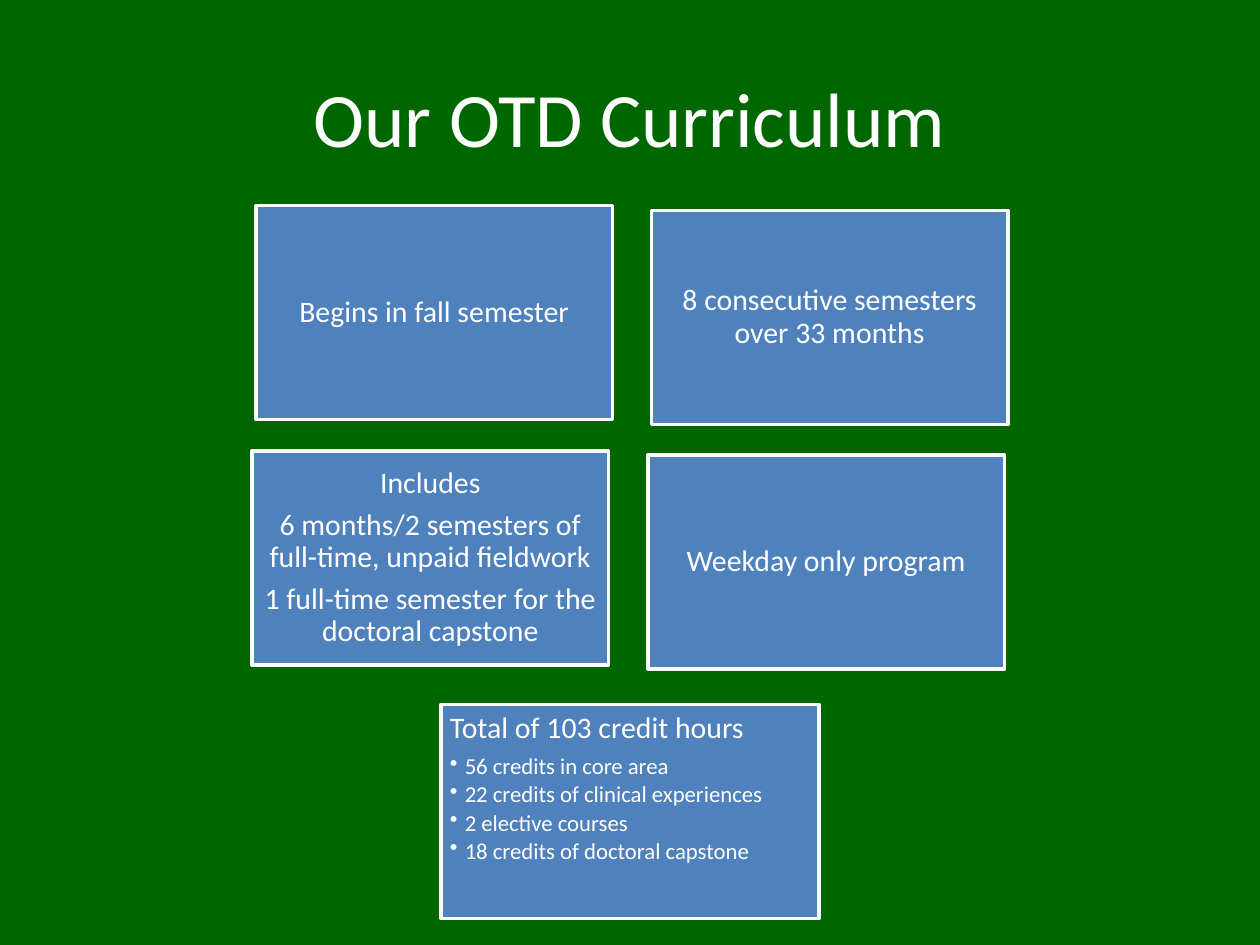
import pptx
import pptx.dml.color
import pptx.enum.shapes
import pptx.enum.text
import pptx.oxml.ns
import pptx.util
from lxml import etree
from pptx.util import Cm, Pt

GREEN = pptx.dml.color.RGBColor(0x00, 0x66, 0x00)
BLUE = pptx.dml.color.RGBColor(0x4F, 0x81, 0xBD)
WHITE = pptx.dml.color.RGBColor(0xFF, 0xFF, 0xFF)

CENTER = pptx.enum.text.PP_ALIGN.CENTER
LEFT = pptx.enum.text.PP_ALIGN.LEFT
MIDDLE = pptx.enum.text.MSO_ANCHOR.MIDDLE
TOP = pptx.enum.text.MSO_ANCHOR.TOP

BOX_WIDTH = 7.19
BOX_HEIGHT = 4.32
BOX_INSET = Cm(0.18)
BULLET_INDENT = Cm(0.3)

MAIN_FORMAT = {"line_spacing": 0.9, "space_after": Pt(5.5)}
DETAIL_FORMAT = {"line_spacing": 0.9, "space_after": Pt(2)}

# Left and top in centimetres, then the paragraphs
FACT_BOXES = [
    (5.16, 4.14, ["Begins in fall semester"]),
    (5.08, 9.09, [
        "Includes",
        "6 months/2 semesters of full-time, unpaid fieldwork",
        "1 full-time semester for the doctoral capstone",
    ]),
    (13.13, 4.24, ["8 consecutive semesters over 33 months"]),
    (13.06, 9.17, ["Weekday only program"]),
]
CREDIT_DETAILS = [
    "56 credits in core area",
    "22 credits of clinical experiences",
    "2 elective courses",
    "18 credits of doctoral capstone",
]


def set_attributes(target, values):
    for name, value in values.items():
        setattr(target, name, value)


def format_font(font, size):
    set_attributes(font, {"name": "Calibri", "size": Pt(size)})
    font.color.rgb = WHITE


def add_title(slide, text):
    title = slide.shapes.title
    set_attributes(title, {
        "left": Cm(1.27), "top": Cm(0.76), "width": Cm(22.86), "height": Cm(3.18),
    })
    title.text_frame.text = text
    title.text_frame.vertical_anchor = MIDDLE
    paragraph = title.text_frame.paragraphs[0]
    paragraph.alignment = CENTER
    format_font(paragraph.runs[0].font, 44)


def add_box(slide, left, top, width, anchor):
    box = slide.shapes.add_shape(
        pptx.enum.shapes.MSO_SHAPE.RECTANGLE,
        Cm(left), Cm(top), Cm(width), Cm(BOX_HEIGHT))
    box.shadow.inherit = False
    box.fill.solid()
    box.fill.fore_color.rgb = BLUE
    box.line.color.rgb = WHITE
    box.line.width = Pt(2)
    set_attributes(box.text_frame, {
        "word_wrap": True, "vertical_anchor": anchor,
        "margin_left": BOX_INSET, "margin_right": BOX_INSET,
        "margin_top": BOX_INSET, "margin_bottom": BOX_INSET,
    })
    return box


def add_bullet(paragraph):
    properties = paragraph._p.get_or_add_pPr()
    properties.set("marL", str(BULLET_INDENT))
    properties.set("indent", str(-BULLET_INDENT))
    bullet = etree.SubElement(properties, pptx.oxml.ns.qn("a:buChar"))
    bullet.set("char", "•")


def write_paragraphs(text_frame, texts, size, alignment, values):
    """Write the texts after any that the frame holds, and return the paragraphs."""
    paragraphs = []
    for text in texts:
        paragraph = text_frame.paragraphs[0]
        if paragraph.runs:
            paragraph = text_frame.add_paragraph()
        run = paragraph.add_run()
        run.text = text
        format_font(run.font, size)
        paragraph.alignment = alignment
        set_attributes(paragraph, values)
        paragraphs.append(paragraph)
    return paragraphs


def add_credit_box(slide):
    box = add_box(slide, 8.89, 14.2, 7.62, TOP)
    write_paragraphs(
        box.text_frame, ["Total of 103 credit hours"], 17, LEFT, MAIN_FORMAT)
    details = write_paragraphs(
        box.text_frame, CREDIT_DETAILS, 13, LEFT, DETAIL_FORMAT)
    for paragraph in details:
        paragraph.level = 1
        add_bullet(paragraph)


def main():
    presentation = pptx.Presentation()
    presentation.slide_width = Cm(25.4)
    presentation.slide_height = Cm(19.05)
    slide = presentation.slides.add_slide(presentation.slide_layouts[5])
    slide.background.fill.solid()
    slide.background.fill.fore_color.rgb = GREEN

    add_title(slide, "Our OTD Curriculum")
    for left, top, texts in FACT_BOXES:
        box = add_box(slide, left, top, BOX_WIDTH, MIDDLE)
        write_paragraphs(box.text_frame, texts, 17, CENTER, MAIN_FORMAT)
    add_credit_box(slide)
    presentation.save("out.pptx")


if __name__ == "__main__":
    main()
